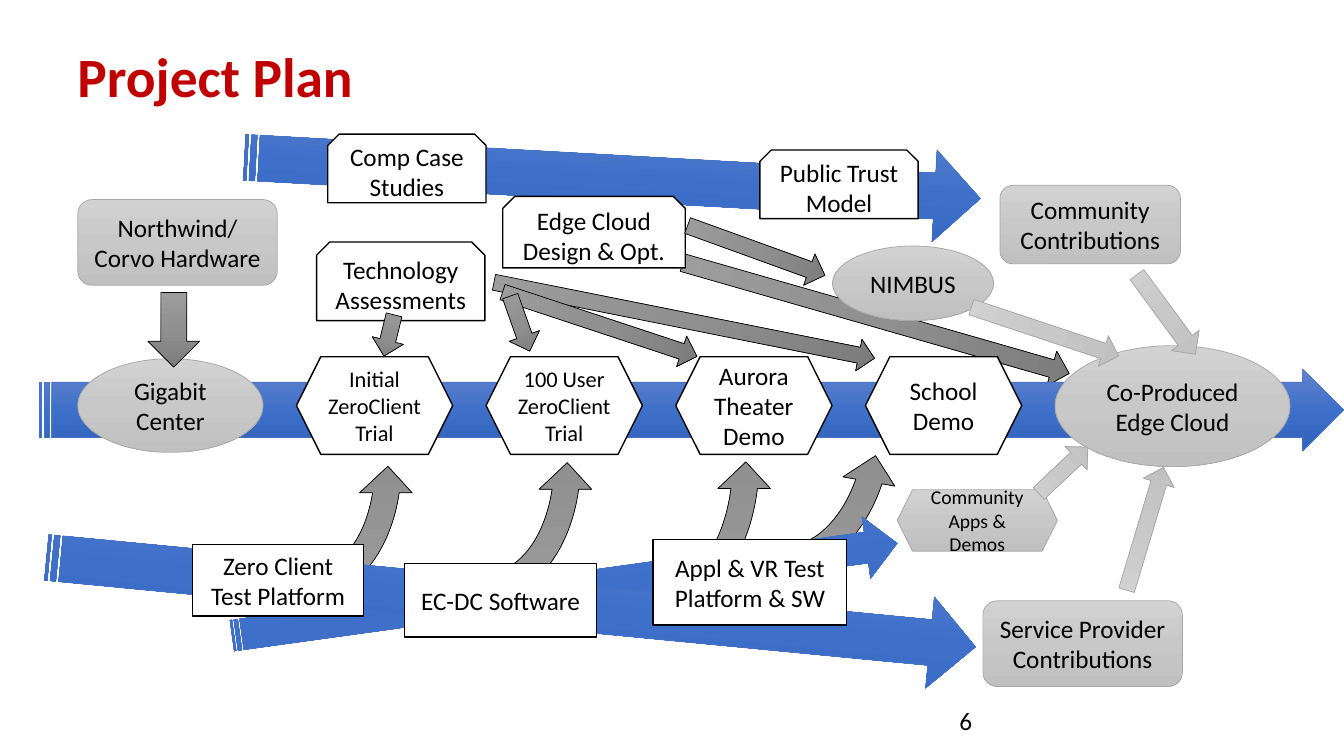
"""Build the Project Plan roadmap slide."""
from copy import deepcopy
from dataclasses import dataclass

from pptx import Presentation
from pptx import util as u
from pptx.dml.color import RGBColor
from pptx.enum import shapes, text
from pptx.oxml.ns import qn

KIND = shapes.MSO_SHAPE


@dataclass(frozen=True)
class Theme:
    font: str = "Calibri"
    title: str = "C00000"
    ink: str = "000000"
    paper: str = "FFFFFF"
    title_size: float = 39.6
    body_size: int = 18
    small_size: int = 16
    tiny_size: int = 14


@dataclass(frozen=True)
class Style:
    fills: tuple
    line: str
    weight: float


THEME = Theme()
BLUE = Style(("6183CB", "3E70CA", "3062BB"), "4472C4", 0.5)
DARK = Style(("9D9D9D", "909090", "7C7C7C"), THEME.ink, 0.5)
LIGHT = Style(("D2D2D2", "C8C8C8", "C0C0C0"), "A5A5A5", 0.5)
WHITE = Style((THEME.paper,), THEME.ink, 1)

TITLE = ("Project Plan", (1.7, 1.3, 30.48, 1.4))
PAGE_NUMBER = ("6", (23.93, 17.65, 7.62, 1.02))

TRUST_BAND = ((6.15, 3.33, 18.57, 2.31), 3.2)
LOWER_BANDS = [
    ((5.77, 14.07, 16.92, 1.57), 352.1),
    ((1.12, 14.02, 23.52, 2.31), 5.5),
]
MAIN_BAND = (0.99, 9.3, 32.87, 2.06)
MAIN_BAND_ADJUST = (0.677, 0.5)

CURVE_WIDTH = 5.31
CURVES = [
    (5.13, 8.08, 7.34, 0, 163.68),
    (9.65, 7.9, 7.52, 0, 163.93),
    (14.15, 7.65, 7.98, 0, 155.18),
    (17.45, 7.49, 7.29, 10.1, 165.65),
]

EDGE_ARROW = ((21.62, 2.95, 0.91, 10.13), 286)
DARK_ARROWS = [
    ((3.73, 7.37, 1.3, 1.88), 0),
    ((16.84, 3.18, 0.81, 9.78), 281.3),
    ((14.71, 5.59, 0.81, 5.16), 288.3),
    ((12.7, 7.42, 0.81, 1.47), 340.5),
    ((9.4, 7.92, 0.81, 1.07), 13.8),
    ((18.64, 4.47, 0.84, 3.68), 289.9),
]
LIGHT_ARROWS = [
    ((26.39, 11, 0.81, 1.7), 226.7),
    ((28.45, 11.71, 0.81, 3.23), 196.7),
    ((25.93, 6.4, 0.81, 3.91), 288.4),
    ((28.96, 6.68, 0.86, 2.49), 323.7),
]

NODES = [
    (KIND.OVAL, LIGHT, [
        ("Co-Produced Edge Cloud", (26.59, 8.71, 5.92, 3.05)),
        ("NIMBUS", (20.98, 6.2, 4.06, 1.88)),
        ("Gigabit Center", (1.96, 9.04, 4.67, 2.36)),
    ]),
    (KIND.ROUNDED_RECTANGLE, LIGHT, [
        ("Northwind/Corvo Hardware", (1.96, 5.03, 5.03, 2.16)),
        ("Service Provider Contributions", (24.77, 15.14, 5.03, 2.16)),
        ("Community Contributions", (25.2, 4.67, 4.55, 1.98)),
    ]),
    (KIND.RECTANGLE, WHITE, [
        ("EC-DC Software", (10.19, 14.2, 4.85, 1.85)),
        ("Appl & VR Test Platform & SW", (16.46, 13.59, 4.88, 2.16)),
        ("Zero Client Test Platform", (4.85, 13.72, 4.32, 1.8)),
    ]),
    (KIND.SNIP_2_SAME_RECTANGLE, WHITE, [
        ("Edge Cloud Design & Opt.", (12.67, 4.95, 4.6, 1.8)),
        ("Public Trust Model", (19.15, 3.78, 3.99, 1.73)),
        ("Technology Assessments", (7.98, 6.1, 4.24, 1.98)),
        ("Comp Case Studies", (8.26, 3.38, 3.99, 1.73)),
    ]),
]
MILESTONES = [
    ("Initial ZeroClient Trial", THEME.small_size),
    ("100 User ZeroClient Trial", THEME.small_size),
    ("Aurora Theater Demo", THEME.body_size),
    ("School Demo", THEME.body_size),
]
MILESTONE_BOX = (7.47, 8.99, 3.94, 2.46)
MILESTONE_STEP = 4.78
COMMUNITY_APPS = ("Community Apps & Demos", (22.61, 12.34, 4.04, 1.55))


def place(box):
    return [u.Cm(length) for length in box]


def write(shape, words, size, color=THEME.ink, align=None, bold=False):
    frame = shape.text_frame
    frame.word_wrap = True
    frame.vertical_anchor = text.MSO_ANCHOR.MIDDLE
    para = frame.paragraphs[0]
    para.text = words
    para.alignment = align
    para.font.name = THEME.font
    para.font.size = u.Pt(size)
    para.font.bold = bold
    para.font.color.rgb = RGBColor.from_string(color)
    return para


def paint(shape, style):
    shape.shadow.inherit = False
    shape.line.color.rgb = RGBColor.from_string(style.line)
    shape.line.width = u.Pt(style.weight)
    if len(style.fills) == 1:
        shape.fill.solid()
        shape.fill.fore_color.rgb = RGBColor.from_string(style.fills[0])
        return
    shape.fill.gradient()
    shape.fill.gradient_angle = 270
    first = shape.element.spPr.find(".//" + qn("a:gs"))
    first.addnext(deepcopy(first))
    for index, stop in enumerate(shape.fill.gradient_stops):
        stop.position = index / 2
        stop.color.rgb = RGBColor.from_string(style.fills[index])


def draw(page, kind, style, box, turn=0, adjust=()):
    shape = page.shapes.add_shape(kind, *place(box))
    shape.rotation = turn
    for index, value in enumerate(adjust):
        shape.adjustments[index] = value
    paint(shape, style)
    return shape


def draw_node(page, kind, style, words, box, size=THEME.body_size):
    write(draw(page, kind, style, box), words, size, align=text.PP_ALIGN.CENTER)


def draw_flows(page):
    band = KIND.STRIPED_RIGHT_ARROW
    draw(page, band, BLUE, *TRUST_BAND)
    for left, top, height, turn, start in CURVES:
        curve = draw(page, KIND.CIRCULAR_ARROW, DARK, (left, top, CURVE_WIDTH, height),
                     turn, (0.125, 11.42, 204.58, start, 0.125))
        curve.element.spPr.xfrm.set("flipV", "1")
    for box, turn in LOWER_BANDS:
        draw(page, band, BLUE, box, turn)
    draw(page, KIND.DOWN_ARROW, DARK, *EDGE_ARROW)
    draw(page, band, BLUE, MAIN_BAND, adjust=MAIN_BAND_ADJUST)


def draw_nodes(page):
    for kind, style, members in NODES:
        for words, box in members:
            draw_node(page, kind, style, words, box)
    left, *rest = MILESTONE_BOX
    for index, (words, size) in enumerate(MILESTONES):
        box = (left + index * MILESTONE_STEP, *rest)
        draw_node(page, KIND.HEXAGON, WHITE, words, box, size)
    draw_node(page, KIND.HEXAGON, LIGHT, *COMMUNITY_APPS, THEME.tiny_size)


def main():
    deck = Presentation()
    deck.slide_width, deck.slide_height = u.Cm(33.87), u.Cm(19.05)
    page = deck.slides.add_slide(deck.slide_layouts[6])
    draw_flows(page)
    words, box = TITLE
    title = page.shapes.add_textbox(*place(box))
    write(title, words, THEME.title_size, THEME.title, bold=True).line_spacing = 0.9
    words, box = PAGE_NUMBER
    write(page.shapes.add_textbox(*place(box)), words, THEME.body_size)
    draw_nodes(page)
    for style, arrows in ((DARK, DARK_ARROWS), (LIGHT, LIGHT_ARROWS)):
        for box, turn in arrows:
            draw(page, KIND.DOWN_ARROW, style, box, turn)
    deck.save("out.pptx")


if __name__ == "__main__":
    main()
